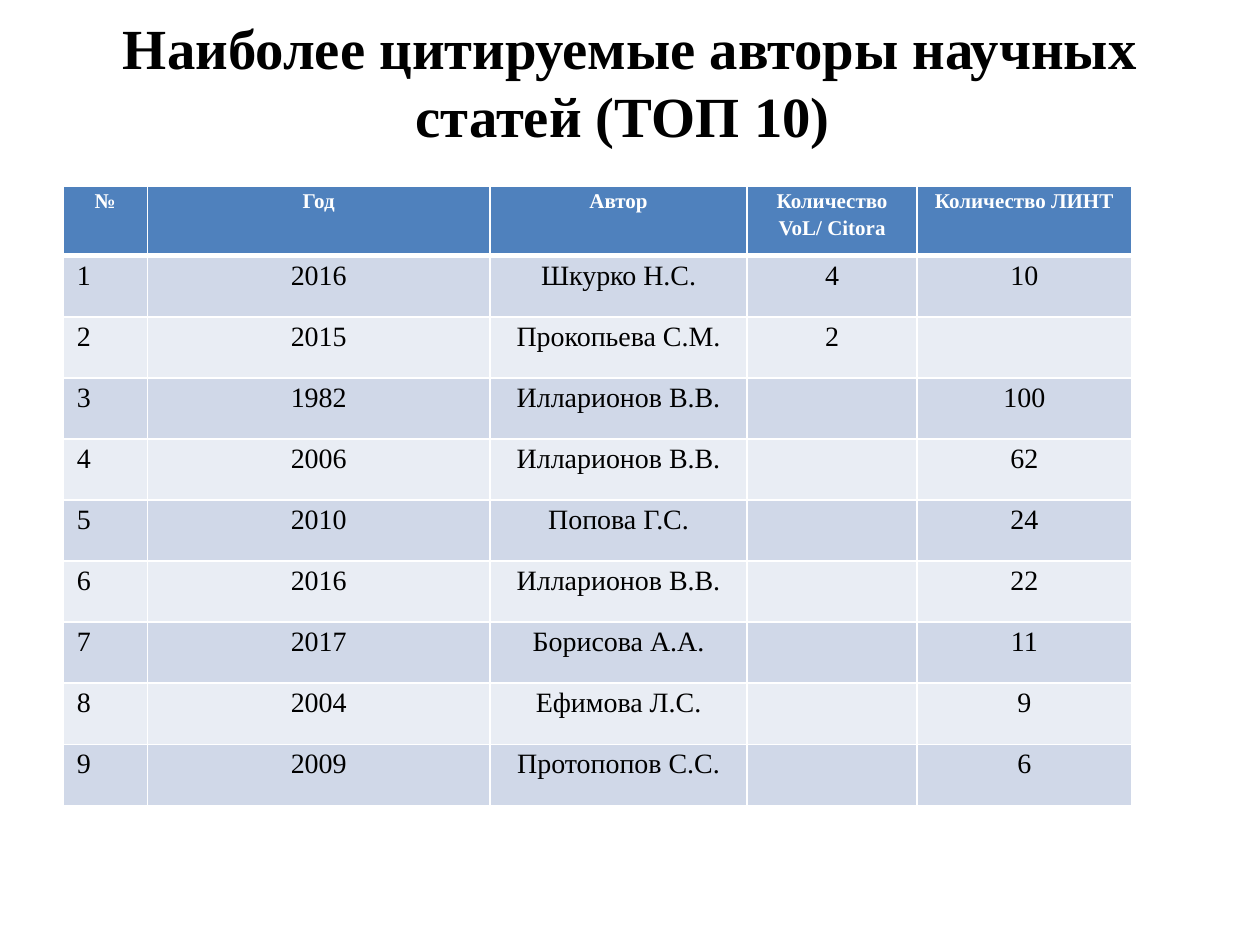
from lxml import etree
from pptx import Presentation
from pptx.dml.color import RGBColor
from pptx.enum.text import MSO_ANCHOR, PP_ALIGN
from pptx.oxml.ns import qn
from pptx.util import Inches, Pt

LEFT, CENTER = PP_ALIGN.LEFT, PP_ALIGN.CENTER
MIDDLE = MSO_ANCHOR.MIDDLE
FONT = "Times New Roman"
BLACK = RGBColor(0x00, 0x00, 0x00)
WHITE = RGBColor(0xFF, 0xFF, 0xFF)
HEADER_BLUE = RGBColor(0x4F, 0x81, 0xBD)
BANDS = (RGBColor(0xE9, 0xED, 0xF4), RGBColor(0xD0, 0xD8, 0xE8))

TITLE = "Наиболее цитируемые авторы научных статей (ТОП 10) "
HEADERS = ("№", "Год", "Автор", "Количество VoL/ Citora", "Количество ЛИНТ")
# year, author, count in the first index, count in the second index
AUTHORS = [
    ("2016", "Шкурко Н.С.", "4", "10"),
    ("2015", "Прокопьева С.М.", "2", ""),
    ("1982", "Илларионов В.В.", "", "100"),
    ("2006", "Илларионов В.В.", "", "62"),
    ("2010", "Попова Г.С.", "", "24"),
    ("2016", "Илларионов В.В.", "", "22"),
    ("2017", "Борисова А.А.", "", "11"),
    ("2004", "Ефимова Л.С.", "", "9"),
    ("2009", "Протопопов С.С.", "", "6"),
]
COLUMN_WIDTHS = (0.67, 2.72, 2.04, 1.35, 1.7)
HEADER_HEIGHT, ROW_HEIGHT = 0.55, 0.485


def write(p, text, size, color, bold, align=CENTER):
    p.text = text
    p.alignment = align
    for r in p.runs:
        r.font.name = FONT
        r.font.size = Pt(size)
        r.font.bold = bold
        r.font.color.rgb = color


def add_borders(cell, top, bottom):
    """White cell borders; top and bottom widths are in points."""
    tc_pr = cell._tc.get_or_add_tcPr()
    for side, width in (("L", 1), ("R", 1), ("T", top), ("B", bottom)):
        ln = etree.SubElement(tc_pr, qn(f"a:ln{side}"), w=str(Pt(width)))
        fill = etree.SubElement(ln, qn("a:solidFill"))
        etree.SubElement(fill, qn("a:srgbClr"), val=str(WHITE))


def add_title(s):
    tf = s.shapes.add_textbox(Inches(0.5), Inches(0.39), Inches(9), Inches(1.16)).text_frame
    tf.word_wrap = True
    tf.vertical_anchor = MIDDLE
    tf.margin_bottom = Inches(0.71)
    write(tf.paragraphs[0], TITLE, 32.4, BLACK, True)


def add_author_table(s):
    rows = [HEADERS] + [(str(n), *author) for n, author in enumerate(AUTHORS, 1)]
    heights = [HEADER_HEIGHT] + [ROW_HEIGHT] * len(AUTHORS)
    table = s.shapes.add_table(
        len(rows), len(HEADERS), Inches(0.5), Inches(1.48),
        Inches(sum(COLUMN_WIDTHS)), Inches(sum(heights))).table
    for column, width in zip(table.columns, COLUMN_WIDTHS):
        column.width = Inches(width)
    for i, (values, height) in enumerate(zip(rows, heights)):
        table.rows[i].height = Inches(height)
        header = i == 0
        for j, text in enumerate(values):
            cell = table.cell(i, j)
            number = j == 0 and not header
            add_borders(cell, 3 if i == 1 else 1, 3 if header else 1)
            cell.fill.solid()
            cell.fill.fore_color.rgb = HEADER_BLUE if header else BANDS[i % 2]
            cell.margin_left = Inches(0.11 if number else 0.07)
            cell.margin_right = Inches(0.07)
            cell.margin_top = cell.margin_bottom = 0
            p = cell.text_frame.paragraphs[0]
            write(p, text, 12 if header else 16, WHITE if header else BLACK,
                  header, LEFT if number else CENTER)
            p.line_spacing = 1.15


def main():
    prs = Presentation()
    prs.slide_width, prs.slide_height = Inches(10), Inches(7.5)
    s = prs.slides.add_slide(prs.slide_layouts[6])
    add_title(s)
    add_author_table(s)
    prs.save("out.pptx")


if __name__ == "__main__":
    main()
